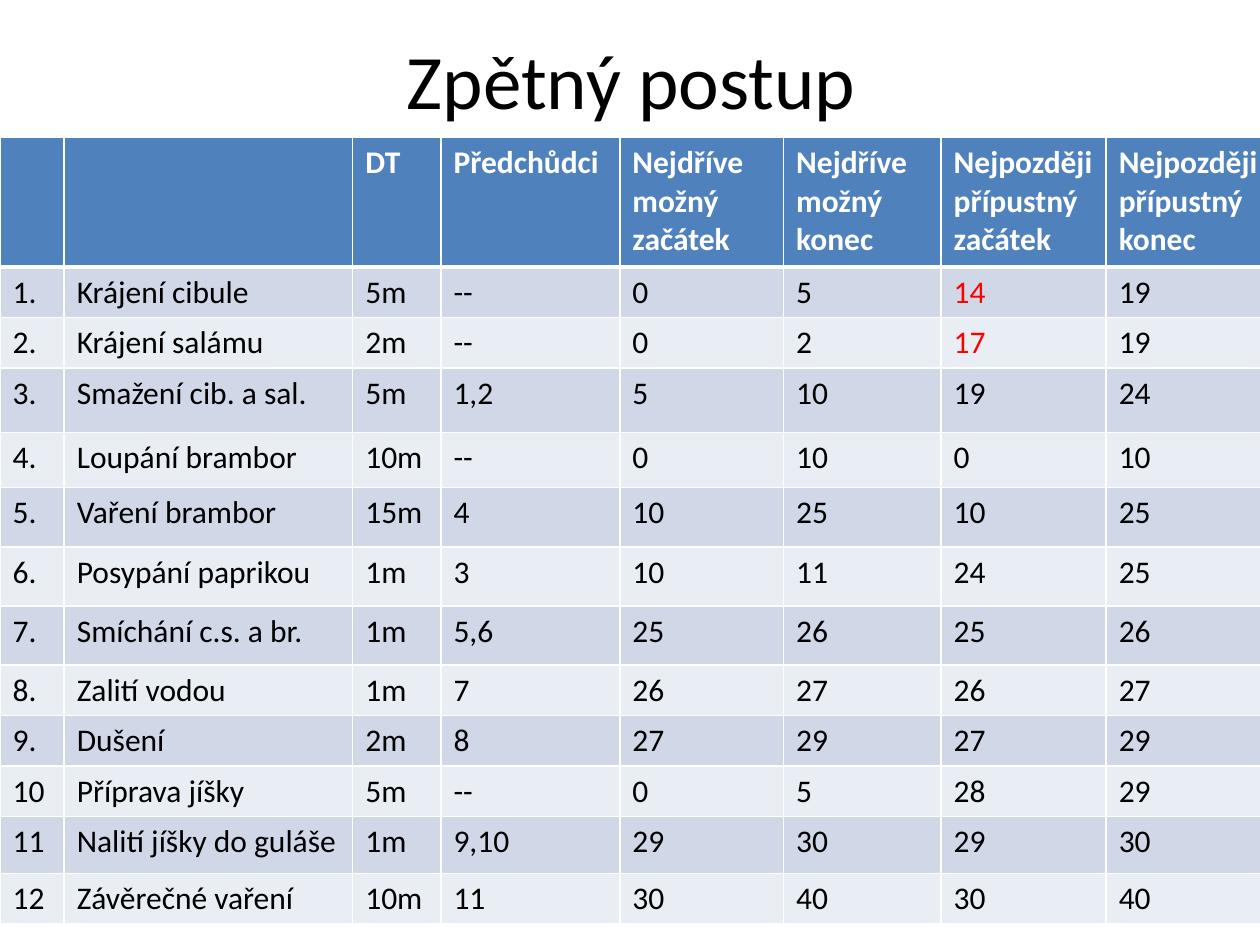
from dataclasses import astuple, dataclass

from lxml import etree
from pptx import Presentation
from pptx.dml.color import RGBColor
from pptx.enum import text
from pptx.oxml import ns
from pptx.util import Inches, Pt


@dataclass(frozen=True)
class Theme:
    font: str = "Calibri"
    title_size: int = 44
    table_size: int = 18
    ink: str = "000000"
    white: str = "FFFFFF"
    alert: str = "FF0000"
    header: str = "4F81BD"
    bands: tuple[str, str] = ("D0D8E8", "E9EDF4")
    thin_line: int = 1
    thick_line: int = 3


@dataclass(frozen=True)
class Task:
    number: str
    name: str
    duration: str
    predecessors: str
    earliest_start: str
    earliest_end: str
    latest_start: str
    latest_end: str


THEME = Theme()
HEADINGS = (
    "", "", "DT", "Předchůdci",
    "Nejdříve možný začátek", "Nejdříve možný konec",
    "Nejpozději přípustný začátek", "Nejpozději přípustný konec",
)
TASKS = (
    Task("1.", "Krájení cibule", "5m", "--", "0", "5", "14", "19"),
    Task("2.", "Krájení salámu", "2m", "--", "0", "2", "17", "19"),
    Task("3.", "Smažení cib. a sal.", "5m", "1,2", "5", "10", "19", "24"),
    Task("4.", "Loupání brambor", "10m", "--", "0", "10", "0", "10"),
    Task("5.", "Vaření brambor", "15m", "4", "10", "25", "10", "25"),
    Task("6.", "Posypání paprikou", "1m", "3", "10", "11", "24", "25"),
    Task("7.", "Smíchání c.s. a br.", "1m", "5,6", "25", "26", "25", "26"),
    Task("8.", "Zalití vodou", "1m", "7", "26", "27", "26", "27"),
    Task("9.", "Dušení", "2m", "8", "27", "29", "27", "29"),
    Task("10", "Příprava jíšky", "5m", "--", "0", "5", "28", "29"),
    Task("11", "Nalití jíšky do guláše", "1m", "9,10", "29", "30", "29", "30"),
    Task("12", "Závěrečné vaření", "10m", "11", "30", "40", "30", "40"),
)
COLUMN_WIDTHS = (0.51, 2.29, 0.7, 1.42, 1.3, 1.25, 1.31, 1.34)
ROW_HEIGHTS = (1.03, 0.4, 0.4, 0.51, 0.44, 0.47, 0.47, 0.47, 0.4, 0.4, 0.38, 0.45, 0.39)
# Latest starts shown in the alert colour, as (row, column)
HIGHLIGHTS = {(1, 6), (2, 6)}


def write(frame, content: str, *, size: int, color: str, bold: bool = False,
          align=text.PP_ALIGN.LEFT) -> None:
    """Put one formatted paragraph into a text frame."""
    para = frame.paragraphs[0]
    para.alignment = align
    span = para.add_run()
    span.text = content
    span.font.name = THEME.font
    span.font.size = Pt(size)
    span.font.bold = bold
    span.font.color.rgb = RGBColor.from_string(color)


def set_borders(cell, top: int, bottom: int) -> None:
    """Draw white cell borders; the side lines are always thin."""
    properties = cell._tc.get_or_add_tcPr()
    widths = {"L": THEME.thin_line, "R": THEME.thin_line, "T": top, "B": bottom}
    for side, width in widths.items():
        line = etree.SubElement(properties, ns.qn(f"a:ln{side}"), w=str(Pt(width)))
        fill = etree.SubElement(line, ns.qn("a:solidFill"))
        etree.SubElement(fill, ns.qn("a:srgbClr"), val=THEME.white)


def add_title(page, content: str) -> None:
    box = page.shapes.add_textbox(Inches(0.51), Inches(0), Inches(9), Inches(1.25))
    box.text_frame.word_wrap = True
    box.text_frame.vertical_anchor = text.MSO_ANCHOR.MIDDLE
    write(box.text_frame, content, size=THEME.title_size, color=THEME.ink,
          align=text.PP_ALIGN.CENTER)


def add_schedule(page) -> None:
    rows = [HEADINGS, *map(astuple, TASKS)]
    table = page.shapes.add_table(
        len(rows), len(HEADINGS), Inches(0), Inches(1.09),
        Inches(sum(COLUMN_WIDTHS)), Inches(sum(ROW_HEIGHTS)),
    ).table
    for column, width in zip(table.columns, COLUMN_WIDTHS):
        column.width = Inches(width)
    for row, height in zip(table.rows, ROW_HEIGHTS):
        row.height = Inches(height)

    for r, values in enumerate(rows):
        is_header = r == 0
        background = THEME.header if is_header else THEME.bands[(r - 1) % 2]
        base_color = THEME.white if is_header else THEME.ink
        # The thick rule lies between the header and the first task
        top = THEME.thick_line if r == 1 else THEME.thin_line
        bottom = THEME.thick_line if is_header else THEME.thin_line
        for c, value in enumerate(values):
            cell = table.cell(r, c)
            set_borders(cell, top, bottom)
            cell.fill.solid()
            cell.fill.fore_color.rgb = RGBColor.from_string(background)
            if value:
                color = THEME.alert if (r, c) in HIGHLIGHTS else base_color
                write(cell.text_frame, value, size=THEME.table_size,
                      color=color, bold=is_header)


def main() -> None:
    deck = Presentation()
    deck.slide_width, deck.slide_height = Inches(10), Inches(7.5)
    page = deck.slides.add_slide(deck.slide_layouts[6])
    add_title(page, "Zpětný postup")
    add_schedule(page)
    deck.save("out.pptx")


if __name__ == "__main__":
    main()
